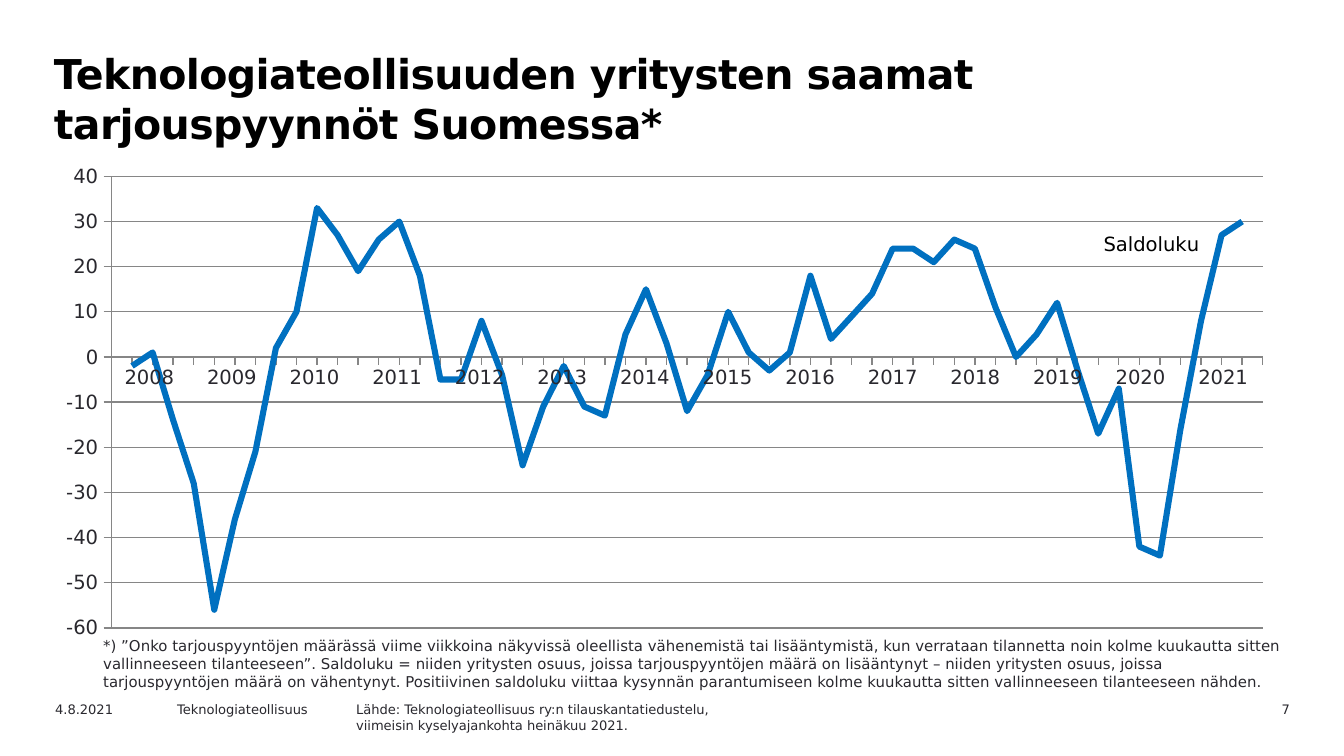
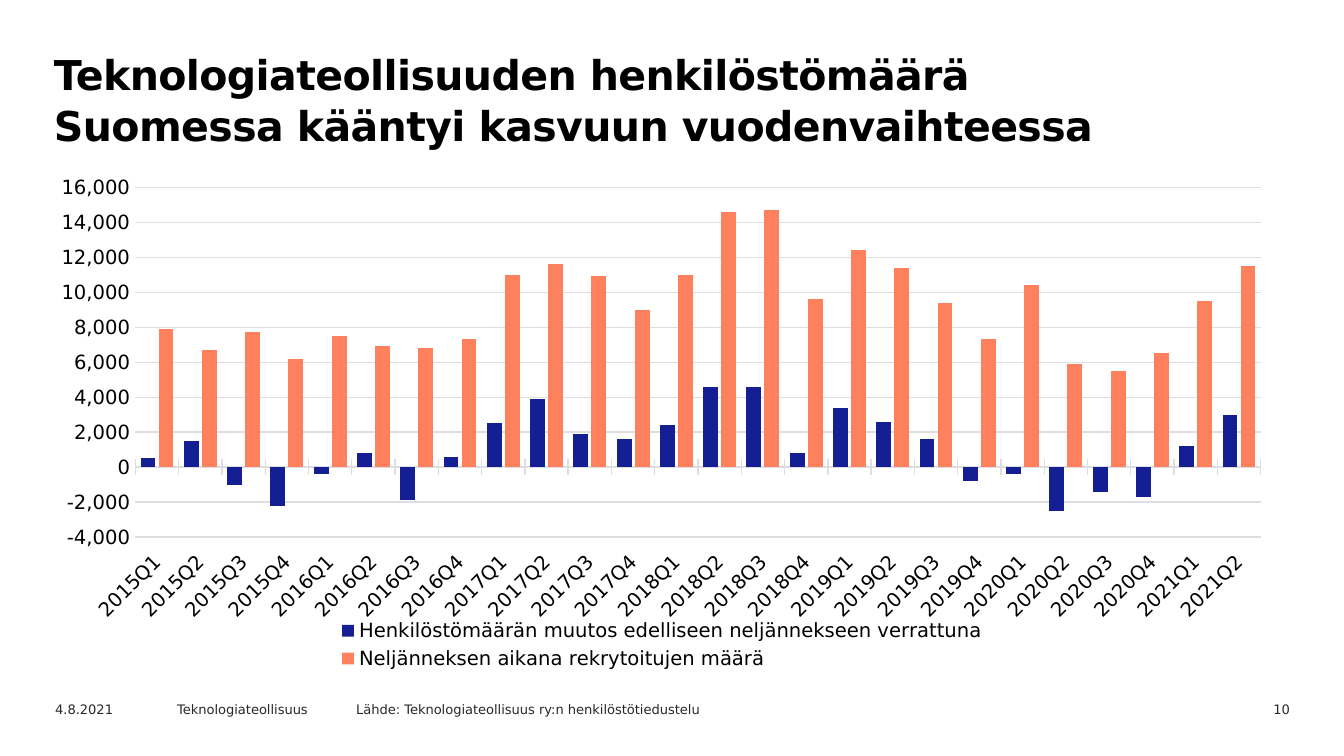
from dataclasses import dataclass

from pptx import Presentation
from pptx.chart.data import CategoryChartData
from pptx.dml.color import RGBColor
from pptx.enum.chart import XL_CHART_TYPE as ChartType
from pptx.enum.chart import XL_LEGEND_POSITION as LegendPosition
from pptx.enum.chart import XL_TICK_LABEL_POSITION as LabelPosition
from pptx.enum.chart import XL_TICK_MARK as TickMark
from pptx.enum.text import MSO_ANCHOR, MSO_AUTO_SIZE
from pptx.enum.text import PP_ALIGN as Align
from pptx.oxml.ns import qn
from pptx.oxml.xmlchemy import OxmlElement
from pptx.util import Emu, Pt


@dataclass(frozen=True)
class Theme:
    font: str = "DejaVu Sans"
    black: str = "000000"
    text: str = "29282E"
    line: str = "0070C0"
    axis: str = "868686"
    grid: str = "DEDDE1"
    staff: str = "141F94"
    recruits: str = "FF805C"
    title_size: float = 22
    chart_size: float = 10.5
    note_size: float = 8
    footer_size: float = 7


THEME = Theme()
EMU_PER_PX = 914400 / 134.4
NO_GRID_STYLE = "{2D5ABB26-0587-4C30-8999-92F81FD0307C}"

BALANCE = [
    None, -2, 1, -14, -28, -56, -36, -21, 2, 10, 33, 27, 19, 26, 30, 18, -5, -5, 8,
    -4, -24, -11, -2, -11, -13, 5, 15, 3, -12, -4, 10, 1, -3, 1, 18, 4, 9, 14, 24,
    24, 21, 26, 24, 11, 0, 5, 12, -3, -17, -7, -42, -44, -16, 8, 27, 30, None,
]
STAFF_CHANGE = [
    500, 1500, -1000, -2200, -400, 800, -1900, 600, 2500, 3900, 1900, 1600, 2400,
    4600, 4600, 800, 3400, 2600, 1600, -800, -400, -2500, -1400, -1700, 1200, 3000,
]
RECRUITS = [
    7900, 6700, 7700, 6200, 7500, 6900, 6800, 7300, 11000, 11600, 10900, 9000, 11000,
    14600, 14700, 9600, 12400, 11400, 9400, 7300, 10400, 5900, 5500, 6500, 9500, 11500,
]
NOTE = (
    "*) ”Onko tarjouspyyntöjen määrässä viime viikkoina näkyvissä oleellista "
    "vähenemistä tai lisääntymistä, kun verrataan tilannetta noin kolme kuukautta "
    "sitten vallinneeseen tilanteeseen”. Saldoluku = niiden yritysten osuus, joissa "
    "tarjouspyyntöjen määrä on lisääntynyt – niiden yritysten osuus, joissa "
    "tarjouspyyntöjen määrä on vähentynyt. Positiivinen saldoluku viittaa kysynnän "
    "parantumiseen kolme kuukautta sitten vallinneeseen tilanteeseen nähden."
)


def px(value):
    return Emu(round(value * EMU_PER_PX))


def box(left, top, width, height):
    return [px(value) for value in (left, top, width, height)]


def set_attributes(target, values):
    for name, value in values.items():
        setattr(target, name, value)


def format_font(font, size, color=THEME.text, bold=False):
    set_attributes(font, {"name": THEME.font, "size": Pt(size), "bold": bold})
    font.color.rgb = RGBColor.from_string(color)


def format_line(line, color, width=0.75):
    line.color.rgb = RGBColor.from_string(color)
    line.width = Pt(width)


def add_title(slide, text, width, height, line_spacing=1.0):
    title = slide.shapes.title
    left, top, width, height = box(38, 42, width, height)
    set_attributes(title, {"left": left, "top": top, "width": width, "height": height})
    frame = title.text_frame
    set_attributes(frame, {
        "word_wrap": True,
        "auto_size": MSO_AUTO_SIZE.NONE,
        "vertical_anchor": MSO_ANCHOR.TOP,
        "margin_left": px(16),
    })
    paragraph = frame.paragraphs[0]
    set_attributes(paragraph, {
        "alignment": Align.LEFT, "line_spacing": line_spacing, "space_before": Pt(0),
    })
    run = paragraph.add_run()
    run.text = text
    format_font(run.font, THEME.title_size, THEME.black, bold=True)
    run._r.get_or_add_rPr().set("spc", "-30")


def add_text(slide, lines, place, size, alignment=Align.LEFT):
    frame = slide.shapes.add_textbox(*box(*place)).text_frame
    frame.word_wrap = True
    for index, line in enumerate(lines):
        paragraph = frame.add_paragraph() if index else frame.paragraphs[0]
        paragraph.alignment = alignment
        run = paragraph.add_run()
        run.text = line
        format_font(run.font, size)


def add_footer(slide, number, source_lines):
    top, height = 695, 24
    items = [
        ([number], 1177, 126, Align.RIGHT),
        (["4.8.2021"], 42, 134, Align.LEFT),
        (["Teknologiateollisuus"], 164, 191, Align.LEFT),
        (source_lines, 343, 445, Align.LEFT),
    ]
    for lines, left, width, alignment in items:
        place = (left, top, width, height + 16 * (len(lines) - 1))
        add_text(slide, lines, place, THEME.footer_size, alignment)


def set_layout(parent, index, **fractions):
    """Place a chart part by fractions of the chart's size."""
    for layout in parent.findall(qn("c:layout")):
        parent.remove(layout)
    layout, manual = OxmlElement("c:layout"), OxmlElement("c:manualLayout")
    settings = [("xMode", "edge"), ("yMode", "edge"), *fractions.items()]
    if "w" in fractions:
        settings.insert(0, ("layoutTarget", "inner"))
    for name, value in settings:
        element = OxmlElement(f"c:{name}")
        element.set("val", str(value))
        manual.append(element)
    layout.append(manual)
    parent.insert(index, layout)


def add_chart(slide, chart_type, place, categories, series):
    data = CategoryChartData()
    data.categories = categories
    for name, values in series:
        data.add_series(name, values)
    chart = slide.shapes.add_chart(chart_type, *box(*place), data).chart
    chart.has_title = chart.has_legend = False
    format_font(chart.font, THEME.chart_size)
    chart.plots[0].vary_by_categories = False
    return chart


def format_axes(chart, color, line_color, scale, tick):
    """Give both axes their font and ticks, and the value axis its scale and grid."""
    for axis in (chart.category_axis, chart.value_axis):
        axis.major_tick_mark = tick
        axis.minor_tick_mark = TickMark.NONE
        format_line(axis.format.line, line_color)
        format_font(axis.tick_labels.font, THEME.chart_size, color)
    minimum, maximum, step = scale
    set_attributes(chart.value_axis, {
        "minimum_scale": minimum, "maximum_scale": maximum,
        "major_unit": step, "has_major_gridlines": True,
    })
    format_line(chart.value_axis.major_gridlines.format.line, line_color)


def put_points_on_ticks(axis):
    element = axis._element
    for old in element.findall(qn("c:crossBetween")):
        element.remove(old)
    crossing = OxmlElement("c:crossBetween")
    crossing.set("val", "midCat")
    element.find(qn("c:crosses")).addnext(crossing)


def add_balance_chart(slide):
    chart = add_chart(
        slide, ChartType.LINE, (56, 159, 1234, 485),
        [str(number + 1) for number in range(len(BALANCE))], [("Series 1", BALANCE)],
    )
    format_axes(chart, THEME.text, THEME.axis, (-60, 40, 10), TickMark.OUTSIDE)
    chart.category_axis.tick_label_position = LabelPosition.NONE
    put_points_on_ticks(chart.value_axis)
    set_layout(chart._chartSpace.chart.plotArea, 0, x=0.045, y=0.036, w=0.933, h=0.931)

    chart.has_title = True
    title = chart.chart_title
    title.text_frame.text = "Saldoluku"
    run = title.text_frame.paragraphs[0].runs[0]
    format_font(run.font, THEME.chart_size, THEME.black)
    set_layout(title._element, 1, x=0.846, y=0.142)

    balance = chart.plots[0].series[0]
    balance.smooth = False
    format_line(balance.format.line, THEME.line, 3.25)


def add_year_labels(slide, years):
    left, top, width, height = box(108, 360, 1157, 42)
    frame = slide.shapes.add_table(1, len(years), left, top, width, height)
    table = frame.table
    table.first_row = table.horz_banding = False
    table._tbl.tblPr.find(qn("a:tableStyleId")).text = NO_GRID_STYLE
    for column, cell, year in zip(table.columns, table.rows[0].cells, years):
        column.width = Emu(width // len(years))
        cell.fill.background()
        paragraph = cell.text_frame.paragraphs[0]
        paragraph.alignment = Align.CENTER
        run = paragraph.add_run()
        run.text = str(year)
        format_font(run.font, THEME.chart_size)


def add_staff_chart(slide):
    quarters = [f"{2015 + n // 4}Q{n % 4 + 1}" for n in range(len(RECRUITS))]
    chart = add_chart(
        slide, ChartType.COLUMN_CLUSTERED, (38, 167, 1249, 508), quarters,
        [
            ("Henkilöstömäärän muutos edelliseen neljännekseen verrattuna", STAFF_CHANGE),
            ("Neljänneksen aikana rekrytoitujen määrä", RECRUITS),
        ],
    )
    format_axes(chart, THEME.black, THEME.grid, (-4000, 16000, 2000), TickMark.CROSS)
    category_axis, value_axis = chart.category_axis, chart.value_axis
    category_axis.tick_label_position = LabelPosition.LOW
    category_axis._element.find(qn("c:txPr")).find(qn("a:bodyPr")).set("rot", "-2700000")
    value_axis.major_tick_mark = TickMark.NONE
    value_axis.format.line.fill.background()
    set_attributes(value_axis.tick_labels, {
        "number_format": "#,##0", "number_format_is_linked": False,
    })
    set_layout(chart._chartSpace.chart.plotArea, 0, x=0.078, y=0.04, w=0.901, h=0.689)

    plot = chart.plots[0]
    set_attributes(plot, {"gap_width": 70, "overlap": -21})
    for series, color in zip(plot.series, (THEME.staff, THEME.recruits)):
        series.invert_if_negative = False
        series.format.fill.solid()
        series.format.fill.fore_color.rgb = RGBColor.from_string(color)

    chart.has_legend = True
    set_attributes(chart.legend, {
        "position": LegendPosition.BOTTOM, "include_in_layout": False,
    })
    format_font(chart.legend.font, THEME.chart_size, THEME.black)


def main():
    presentation = Presentation()
    presentation.slide_width, presentation.slide_height = px(1344), px(756)
    title_only = presentation.slide_layouts[5]

    slide = presentation.slides.add_slide(title_only)
    add_title(
        slide, "Teknologiateollisuuden yritysten saamat tarjouspyynnöt Suomessa*", 1175, 126
    )
    add_footer(slide, "7", [
        "Lähde: Teknologiateollisuus ry:n tilauskantatiedustelu,",
        "viimeisin kyselyajankohta heinäkuu 2021.",
    ])
    add_balance_chart(slide)
    add_text(slide, [NOTE], (90, 630, 1208, 67), THEME.note_size)
    add_year_labels(slide, range(2008, 2022))

    slide = presentation.slides.add_slide(title_only)
    add_title(
        slide,
        "Teknologiateollisuuden henkilöstömäärä Suomessa kääntyi kasvuun vuodenvaihteessa",
        1153, 95, Pt(27),
    )
    add_footer(slide, "10", ["Lähde: Teknologiateollisuus ry:n henkilöstötiedustelu"])
    add_staff_chart(slide)

    presentation.save("out.pptx")


if __name__ == "__main__":
    main()
